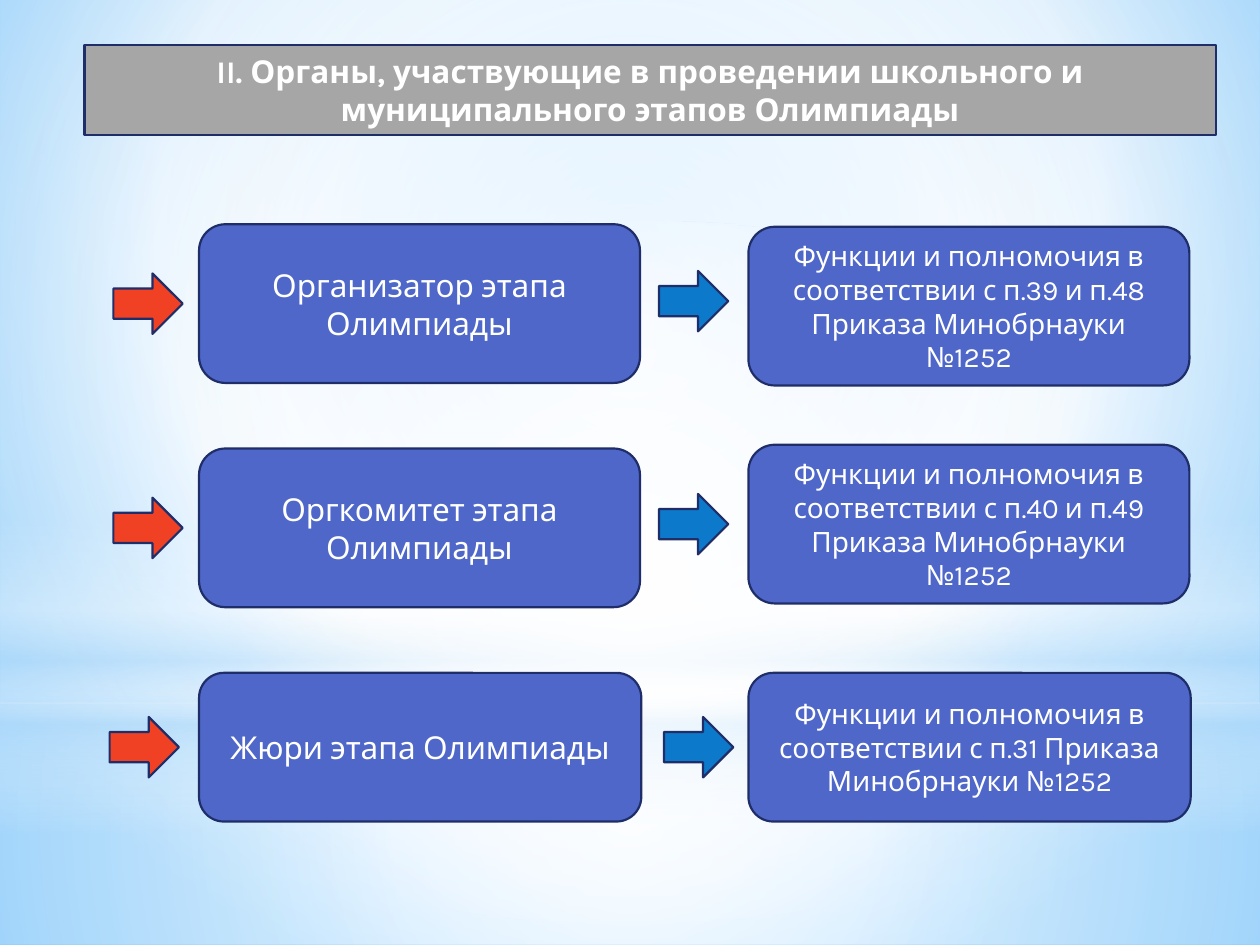
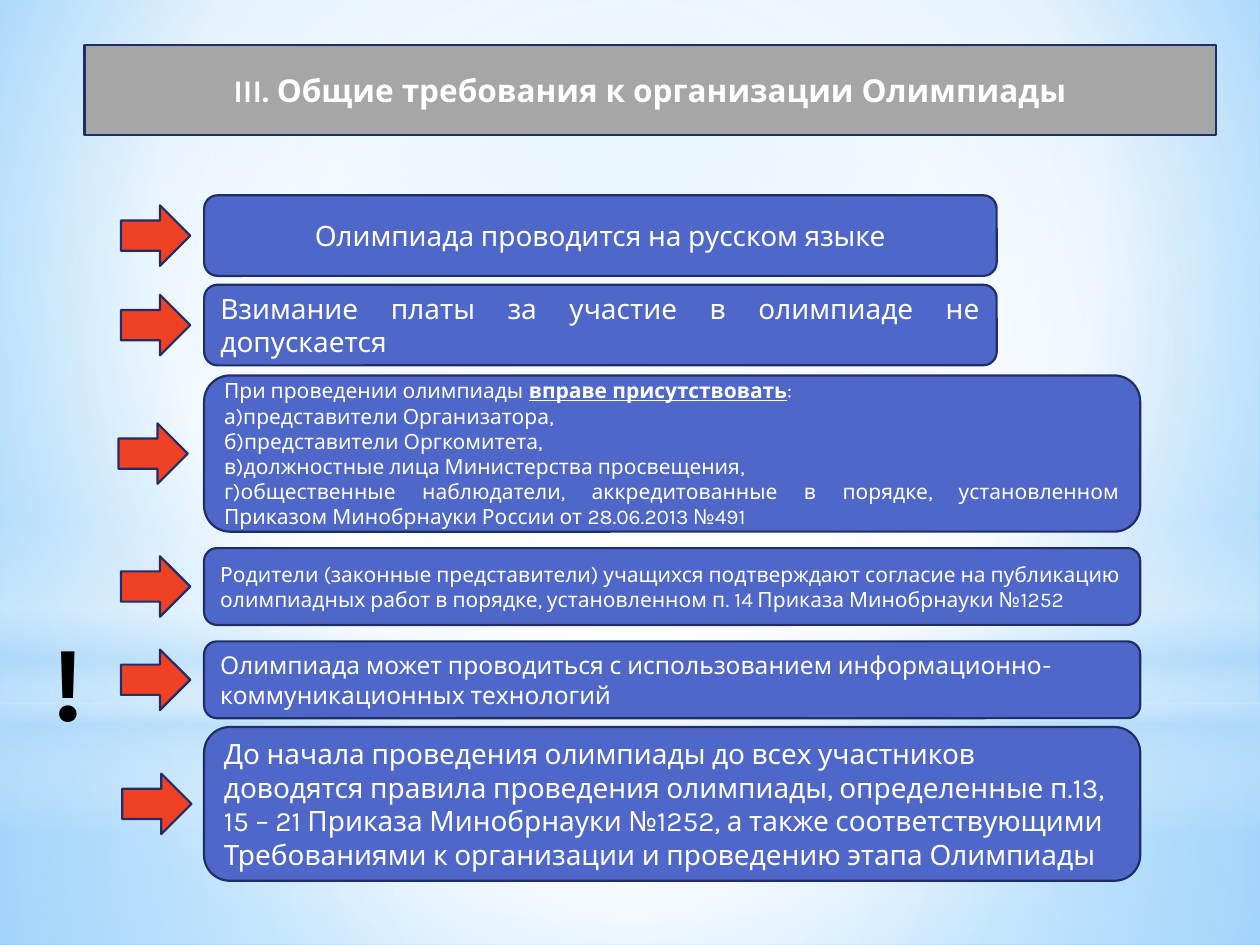
from pptx import Presentation
from pptx.dml.color import RGBColor
from pptx.enum.shapes import MSO_SHAPE as SHAPE
from pptx.enum.text import MSO_ANCHOR as ANCHOR, MSO_AUTO_SIZE as AUTO_SIZE, PP_ALIGN as ALIGN
from pptx.oxml import parse_xml
from pptx.oxml.ns import nsdecls
from pptx.util import Inches, Pt

FONT = "Karla"
WHITE = RGBColor(0xFF, 0xFF, 0xFF)
BLACK = RGBColor(0x00, 0x00, 0x00)
GREY = RGBColor(0xA6, 0xA6, 0xA6)
NAVY = RGBColor(0x1F, 0x2E, 0x69)
INDIGO = RGBColor(0x4E, 0x67, 0xC8)
RED = RGBColor(0xF1, 0x41, 0x24)
BLUE = RGBColor(0x0D, 0x79, 0xCA)
SKY = RGBColor(0xB4, 0xDC, 0xFA)
SKY_CENTRE = RGBColor(0x9E, 0xD5, 0xFF)
SKY_EDGE = RGBColor(0x5B, 0xB9, 0xFF)

ARROW_W, ARROW_H = 0.55, 0.48
CENTRE = (50, 50, 50, 50)


def set_gradient(properties, stops, focus=None):
    """Replace a solid fill by (position, colour, opacity) stops: radial at focus, else downward."""
    stop_xml = "".join(
        f'<a:gs pos="{pos * 1000}"><a:srgbClr val="{colour}">'
        f'<a:alpha val="{opacity * 1000}"/></a:srgbClr></a:gs>'
        for pos, colour, opacity in stops)
    if focus:
        sides = " ".join(f'{side}="{value * 1000}"' for side, value in zip("ltrb", focus))
        direction = f'<a:path path="circle"><a:fillToRect {sides}/></a:path>'
    else:
        direction = '<a:lin ang="5400000" scaled="0"/>'
    gradient = parse_xml(f'<a:gradFill {nsdecls("a")} rotWithShape="1">'
                         f'<a:gsLst>{stop_xml}</a:gsLst>{direction}</a:gradFill>')
    solid = properties.xpath("a:solidFill")[0]
    properties.replace(solid, gradient)


def add_backdrop(master, slide):
    """Give the master its sky: a background and four glows, drawn on slide and moved."""
    master.background.fill.solid()
    set_gradient(master.element.xpath("p:cSld/p:bg/p:bgPr")[0],
                 [(0, SKY_CENTRE, 100), (60, WHITE, 100), (100, SKY_EDGE, 100)],
                 (20, 10, 20, 60))
    glows = [
        (SHAPE.RECTANGLE, 5.58, 1.92, CENTRE,
         [(0, WHITE, 91), (37, WHITE, 76), (100, SKY, 79)]),
        (SHAPE.RECTANGLE, 0, 5.58, CENTRE,
         [(0, WHITE, 89), (48, WHITE, 62), (100, SKY, 79)]),
        (SHAPE.RECTANGLE, 4.12, 2.5, None,
         [(0, WHITE, 0), (29, WHITE, 30), (45, SKY, 40),
          (55, WHITE, 26), (65, SKY, 60), (100, WHITE, 0)]),
        (SHAPE.OVAL, 1.75, 5.58, CENTRE, [(0, WHITE, 100), (56, WHITE, 0)]),
    ]
    for order, (kind, top, height, focus, stops) in enumerate(glows):
        glow = slide.shapes.add_shape(kind, 0, Inches(top), Inches(10), Inches(height))
        glow.shadow.inherit = False
        glow.fill.solid()
        glow.line.fill.background()
        set_gradient(glow.element.spPr, stops, focus)
        glow.element.xpath(".//p:cNvPr")[0].set("id", str(100 + order))
        master.shapes.element.insert(2 + order, glow.element)


def paint(shape, colour):
    shape.shadow.inherit = False
    shape.fill.solid()
    shape.fill.fore_color.rgb = colour
    shape.line.color.rgb = NAVY
    shape.line.width = Pt(1.25)


def add_run(paragraph, text, size, colour=WHITE, bold=False, underline=False):
    run = paragraph.add_run()
    run.text = text
    font = run.font
    font.name, font.size, font.bold, font.underline = FONT, Pt(size), bold, underline
    font.color.rgb = colour


def add_title(slide, text):
    """Turn the title placeholder into the grey rounded band."""
    title = slide.shapes.title
    title.left, title.top = Inches(0.67), Inches(0.36)
    title.width, title.height = Inches(8.98), Inches(0.71)
    title.element.spPr.append(parse_xml(
        f'<a:prstGeom {nsdecls("a")} prst="roundRect"><a:avLst/></a:prstGeom>'))
    paint(title, GREY)
    frame = title.text_frame
    frame.auto_size = AUTO_SIZE.NONE
    frame.vertical_anchor = ANCHOR.MIDDLE
    frame.paragraphs[0].alignment = ALIGN.CENTER
    add_run(frame.paragraphs[0], text, 18, bold=True)


def add_card(slide, left, top, width, height, lines, size, align=ALIGN.CENTER, space=0):
    """Each line is a string or a list of (text, emphasised) runs."""
    card = slide.shapes.add_shape(SHAPE.ROUNDED_RECTANGLE, Inches(left), Inches(top),
                                  Inches(width), Inches(height))
    paint(card, INDIGO)
    frame = card.text_frame
    frame.word_wrap = True
    frame.vertical_anchor = ANCHOR.MIDDLE
    for number, line in enumerate(lines):
        paragraph = frame.add_paragraph() if number else frame.paragraphs[0]
        paragraph.alignment = align
        paragraph.space_before = paragraph.space_after = Pt(space)
        for text, strong in [(line, False)] if isinstance(line, str) else line:
            add_run(paragraph, text, size, bold=strong, underline=strong)


def add_arrow(slide, left, middle, colour):
    arrow = slide.shapes.add_shape(SHAPE.RIGHT_ARROW, Inches(left), Inches(middle - ARROW_H / 2),
                                   Inches(ARROW_W), Inches(ARROW_H))
    paint(arrow, colour)


def add_exclamation(slide):
    mark = slide.shapes.add_textbox(Inches(0.28), Inches(4.84), Inches(0.51), Inches(1.11))
    frame = mark.text_frame
    frame.word_wrap = False
    frame.auto_size = AUTO_SIZE.SHAPE_TO_FIT_TEXT
    frame.paragraphs[0].alignment = ALIGN.CENTER
    add_run(frame.paragraphs[0], "!", 60, BLACK, bold=True)


def fill_bodies_slide(slide):
    add_title(slide, "II. Органы, участвующие в проведении школьного и муниципального этапов Олимпиады")
    # body, its points, body top, duties top, width, height, red and blue arrow left
    rows = [
        ("Организатор этапа Олимпиады", "п.39 и п.48", 1.78, 1.8, 3.5, 1.26, 0.9, 5.23),
        ("Оргкомитет этапа Олимпиады", "п.40 и п.49", 3.56, 3.53, 3.5, 1.26, 0.9, 5.23),
        ("Жюри этапа Олимпиады", "п.31", 5.34, 5.34, 3.51, 1.18, 0.87, 5.27),
    ]
    for row, (body, points, body_top, duties_top, width, height, red_x, blue_x) in enumerate(rows):
        duties = f"Функции и полномочия в соответствии с {points} Приказа Минобрнауки №1252"
        add_card(slide, 1.58, body_top, width, height, [body], 18, space=6 if row else 0)
        add_card(slide, 5.94, duties_top, width, height, [duties], 16)
        add_arrow(slide, red_x, body_top + height / 2, RED)
        add_arrow(slide, blue_x, 2.39 + 1.77 * row, BLUE)


def fill_requirements_slide(slide):
    add_title(slide, "III. Общие требования к организации Олимпиады")
    attendees = [
        [("При проведении олимпиады ", False), ("вправе присутствовать", True), (":", False)],
        "а)представители Организатора,",
        "б)представители Оргкомитета,",
        "в)должностные лица Министерства просвещения,",
        "г)общественные наблюдатели, аккредитованные в порядке, установленном "
        "Приказом Минобрнауки России от 28.06.2013 №491",
    ]
    # arrow left, top, width, height, lines, size, alignment, spacing
    requirements = [
        (0.96, 1.55, 6.29, 0.64, ["Олимпиада проводится на русском языке"], 16, ALIGN.CENTER, 0),
        (0.96, 2.26, 6.29, 0.64, ["Взимание платы за участие в олимпиаде не допускается"],
         16, ALIGN.JUSTIFY, 6),
        (0.94, 2.98, 7.43, 1.24, attendees, 12, ALIGN.JUSTIFY, 0),
        (0.96, 4.35, 7.43, 0.61,
         ["Родители (законные представители) учащихся подтверждают согласие на публикацию "
          "олимпиадных работ в порядке, установленном п. 14 Приказа Минобрнауки №1252"],
         12, ALIGN.LEFT, 0),
        (0.96, 5.09, 7.43, 0.61,
         ["Олимпиада может проводиться с использованием "
          "информационно-коммуникационных технологий"], 14, ALIGN.LEFT, 0),
        (0.97, 5.77, 7.43, 1.22,
         ["До начала проведения олимпиады до всех участников доводятся правила проведения "
          "олимпиады, определенные п.13, 15 – 21 Приказа Минобрнауки №1252, а также "
          "соответствующими Требованиями к организации и проведению этапа Олимпиады"],
         16, ALIGN.LEFT, 0),
    ]
    for arrow_x, top, width, height, lines, size, align, space in requirements:
        add_card(slide, 1.62, top, width, height, lines, size, align, space)
        add_arrow(slide, arrow_x, top + height / 2, RED)
    add_exclamation(slide)


def main():
    prs = Presentation()
    prs.slide_width, prs.slide_height = Inches(10), Inches(7.5)
    title_only = prs.slide_layouts[5]
    bodies = prs.slides.add_slide(title_only)
    requirements = prs.slides.add_slide(title_only)
    add_backdrop(prs.slide_master, bodies)
    fill_bodies_slide(bodies)
    fill_requirements_slide(requirements)
    prs.save("out.pptx")


if __name__ == "__main__":
    main()
